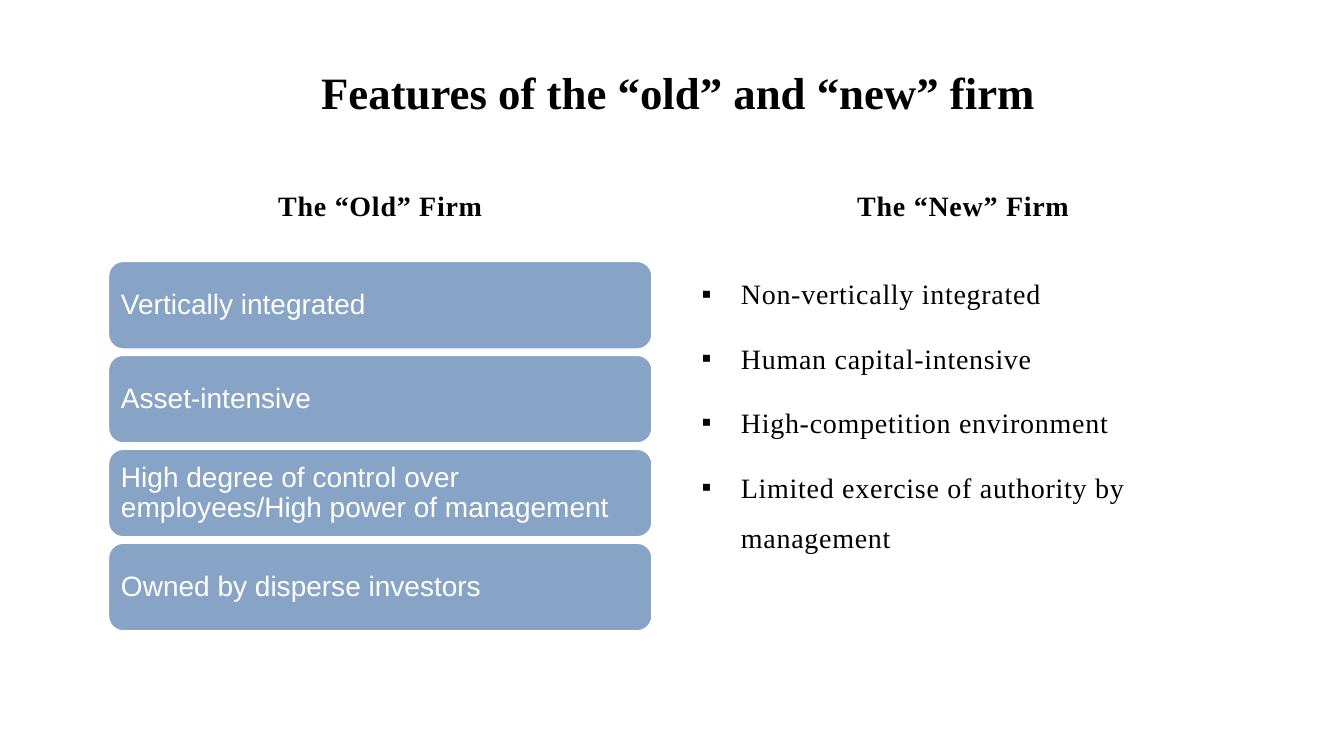
from pptx import Presentation
from pptx.dml.color import RGBColor
from pptx.enum.shapes import MSO_SHAPE
from pptx.enum.text import MSO_ANCHOR, MSO_AUTO_SIZE, PP_ALIGN
from pptx.util import Pt
from lxml.etree import SubElement
from pptx.oxml.ns import qn

TITLE = "Features of the “old” and “new” firm"
OLD_HEADING = "The “Old” Firm"
NEW_HEADING = "The “New” Firm"
OLD_FEATURES = [
    "Vertically integrated",
    "Asset-intensive",
    "High degree of control over employees/High power of management",
    "Owned by disperse investors",
]
NEW_FEATURES = [
    "Non-vertically integrated",
    "Human capital-intensive",
    "High-competition environment",
    "Limited exercise of authority by management",
]

BLACK = RGBColor(0x00, 0x00, 0x00)
WHITE = RGBColor(0xFF, 0xFF, 0xFF)
BLUE = RGBColor(0x87, 0xA4, 0xC7)
SERIF, SANS = "Times New Roman", "Arial"

OLD_X, NEW_X, COLUMN_W = 77.6, 494, 388
HEADING_Y, HEADING_H = 118.8, 55.4
LIST_Y, LIST_H = 182.2, 273
BOX_Y, BOX_H, BOX_PITCH = 186.8, 62.4, 67.1
INDENT = 28


def place(shape, x, y, w, h):
    shape.left, shape.top, shape.width, shape.height = Pt(x), Pt(y), Pt(w), Pt(h)


def style_text(tf, font, size, color, bold=False, spacing=0):
    """Format every run; spacing is the letter spacing in points."""
    for p in tf.paragraphs:
        for r in p.runs:
            r.font.name, r.font.size, r.font.bold = font, Pt(size), bold
            r.font.color.rgb = color
            if spacing:
                r._r.get_or_add_rPr().set("spc", str(int(spacing * 100)))


def fill_placeholder(sp, text, anchor):
    tf = sp.text_frame
    tf.text = text
    tf.auto_size = MSO_AUTO_SIZE.NONE
    tf.vertical_anchor = anchor
    return tf


def loosen(p):
    p.line_spacing, p.space_before = 1.5, Pt(10)


def add_square_bullet(p):
    pPr = p._p.get_or_add_pPr()
    pPr.set("marL", str(Pt(INDENT)))
    pPr.set("indent", str(-Pt(INDENT)))
    SubElement(pPr, qn("a:buFont"), typeface=SERIF)
    SubElement(pPr, qn("a:buChar"), char="▪")


def add_feature_box(s, text, y):
    sp = s.shapes.add_shape(MSO_SHAPE.ROUNDED_RECTANGLE,
                            Pt(OLD_X), Pt(y), Pt(COLUMN_W), Pt(BOX_H))
    sp.shadow.inherit = False
    sp.fill.solid()
    sp.fill.fore_color.rgb = BLUE
    sp.line.color.rgb = WHITE
    sp.line.width = Pt(0.85)
    tf = sp.text_frame
    tf.text = text
    tf.word_wrap = True
    tf.vertical_anchor = MSO_ANCHOR.MIDDLE
    tf.margin_left = tf.margin_right = Pt(5.8)
    tf.margin_top = tf.margin_bottom = Pt(4)
    p = tf.paragraphs[0]
    p.alignment, p.line_spacing = PP_ALIGN.LEFT, 0.9
    style_text(tf, SANS, 20, WHITE)


def main():
    prs = Presentation()
    prs.slide_width, prs.slide_height = Pt(960), Pt(540)
    s = prs.slides.add_slide(prs.slide_layouts[4])
    title, old_head, old_body, new_head, new_body = s.placeholders
    old_body._element.getparent().remove(old_body._element)

    place(title, 0, 0, 969, 88)
    tf = fill_placeholder(title, TITLE, MSO_ANCHOR.BOTTOM)
    tf.paragraphs[0].alignment = PP_ALIGN.CENTER
    style_text(tf, SERIF, 32, BLACK, bold=True)

    for head, text, x in ((old_head, OLD_HEADING, OLD_X), (new_head, NEW_HEADING, NEW_X)):
        place(head, x, HEADING_Y, COLUMN_W, HEADING_H)
        tf = fill_placeholder(head, text, MSO_ANCHOR.TOP)
        tf.paragraphs[0].alignment = PP_ALIGN.CENTER
        loosen(tf.paragraphs[0])
        style_text(tf, SERIF, 20, BLACK, bold=True, spacing=0.5)

    for i, feature in enumerate(OLD_FEATURES):
        add_feature_box(s, feature, BOX_Y + i * BOX_PITCH)

    place(new_body, NEW_X, LIST_Y, COLUMN_W, LIST_H)
    tf = fill_placeholder(new_body, "\n".join(NEW_FEATURES), MSO_ANCHOR.TOP)
    for p in tf.paragraphs:
        loosen(p)
        add_square_bullet(p)
    style_text(tf, SERIF, 20, BLACK, spacing=0.5)

    prs.save("out.pptx")


if __name__ == "__main__":
    main()
